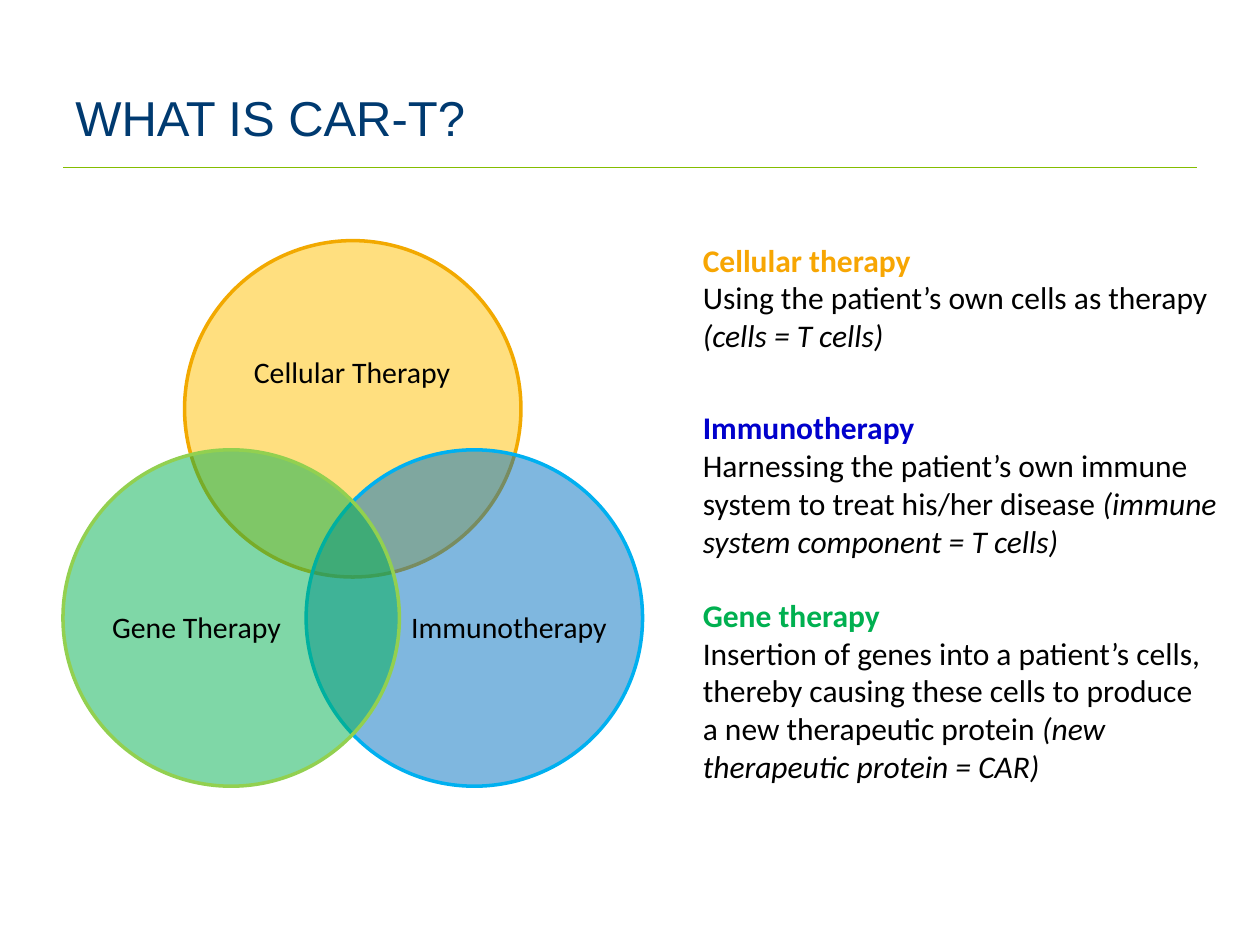
from lxml.etree import SubElement
from pptx import Presentation
from pptx.dml.color import RGBColor
from pptx.enum.shapes import MSO_CONNECTOR, MSO_SHAPE
from pptx.enum.text import MSO_ANCHOR, PP_ALIGN
from pptx.oxml.ns import qn
from pptx.util import Inches, Pt


def color(hex_value):
    """Turn a hex string into a colour."""
    return RGBColor.from_string(hex_value)


def add_text(slide, box, paragraphs, size=18, font="Calibri", align=PP_ALIGN.LEFT,
             anchor=MSO_ANCHOR.TOP, margins=(0.1, 0.05), line_spacing=None):
    """Write paragraphs, each a list of (text, hex, bold, italic) runs, in a box."""
    frame = slide.shapes.add_textbox(*map(Inches, box)).text_frame
    frame.word_wrap = True
    frame.vertical_anchor = anchor
    frame.margin_left = frame.margin_right = Inches(margins[0])
    frame.margin_top = frame.margin_bottom = Inches(margins[1])
    for index, runs in enumerate(paragraphs):
        paragraph = frame.add_paragraph() if index else frame.paragraphs[0]
        paragraph.alignment = align
        paragraph.line_spacing = line_spacing
        for text, hex_value, bold, italic in runs:
            run = paragraph.add_run()
            run.text = text
            run.font.name = font
            run.font.size = Pt(size)
            run.font.bold = bold
            run.font.italic = italic
            run.font.color.rgb = color(hex_value)


def add_header(slide, box, title):
    """Place the title and the rule that crosses its box."""
    left, top, width, _ = box
    rule_y = Inches(top + 1.03)
    rule = slide.shapes.add_connector(
        MSO_CONNECTOR.STRAIGHT, Inches(left), rule_y, Inches(left + width), rule_y)
    rule.line.color.rgb = color("84BD00")
    rule.line.width = Pt(0.75)
    SubElement(rule._element.spPr, qn("a:effectLst"))
    add_text(slide, box, [[(title, "003A70", False, False)]], size=28, font="Arial",
             anchor=MSO_ANCHOR.MIDDLE)


def add_circle(slide, left, top, diameter, fill, outline):
    """Draw one half-transparent circle."""
    circle = slide.shapes.add_shape(
        MSO_SHAPE.OVAL, Inches(left), Inches(top), Inches(diameter), Inches(diameter))
    circle.shadow.inherit = False
    circle.fill.solid()
    circle.fill.fore_color.rgb = color(fill)
    fill_color = circle._element.spPr.find(qn("a:solidFill"))[0]
    SubElement(fill_color, qn("a:alpha"), val="50000")
    circle.line.color.rgb = color(outline)
    circle.line.width = Pt(2)


def add_venn(slide, box):
    """Draw three overlapping circles, one on top and two below, with labels."""
    left, top, width, height = box
    diameter = 2.67
    right_x, low_y = width - diameter, height - diameter
    label_y, label_width, label_height = low_y + 0.69, 1.6, 1.47
    circles = [
        ("Cellular Therapy", "FFC000", "F2A900", right_x / 2, 0,
         (right_x / 2 + 0.35, 0.46, 1.96, 1.2)),
        ("Immunotherapy", "0070C0", "00B0F0", right_x, low_y,
         (width - 0.26 - label_width, label_y, label_width, label_height)),
        ("Gene Therapy", "00B050", "92D050", 0, low_y,
         (0.26, label_y, label_width, label_height)),
    ]
    for name, fill, outline, x, y, (label_x, label_top, *label_size) in circles:
        add_circle(slide, left + x, top + y, diameter, fill, outline)
        add_text(slide, (left + label_x, top + label_top, *label_size),
                 [[(name, "000000", False, False)]], size=17, align=PP_ALIGN.CENTER,
                 anchor=MSO_ANCHOR.MIDDLE, margins=(0, 0), line_spacing=0.9)


def add_definition(slide, box, term, term_color, *lines):
    """Write a bold coloured term above its explanation."""
    body = [[(text, "000000", False, italic) for text, italic in line] for line in lines]
    add_text(slide, box, [[(term, term_color, True, False)], *body])


def main():
    """Build the slide and save it."""
    deck = Presentation()
    deck.slide_width, deck.slide_height = Inches(10), Inches(7.5)
    slide = deck.slides.add_slide(deck.slide_layouts[6])
    add_header(slide, (0.5, 0.3, 9, 1.25), "WHAT IS CAR-T?")
    add_venn(slide, (0.5, 1.91, 4.6, 4.33))
    add_definition(
        slide, (5.48, 1.86, 4.34, 1.01), "Cellular therapy", "F7A603",
        [("Using the patient’s own cells as therapy", False)],
        [("(cells = T cells)", True)])
    add_definition(
        slide, (5.48, 3.19, 4.34, 1.31), "Immunotherapy", "0000CC",
        [("Harnessing the patient’s own immune system to treat his/her disease ", False),
         ("(immune system component = T cells)", True)])
    add_definition(
        slide, (5.48, 4.68, 4.23, 1.62), "Gene therapy", "00B050",
        [("Insertion of genes into a patient’s cells, thereby causing these cells "
          "to produce a new therapeutic protein ", False),
         ("(new therapeutic protein = CAR)", True)])
    deck.save("out.pptx")


if __name__ == "__main__":
    main()
